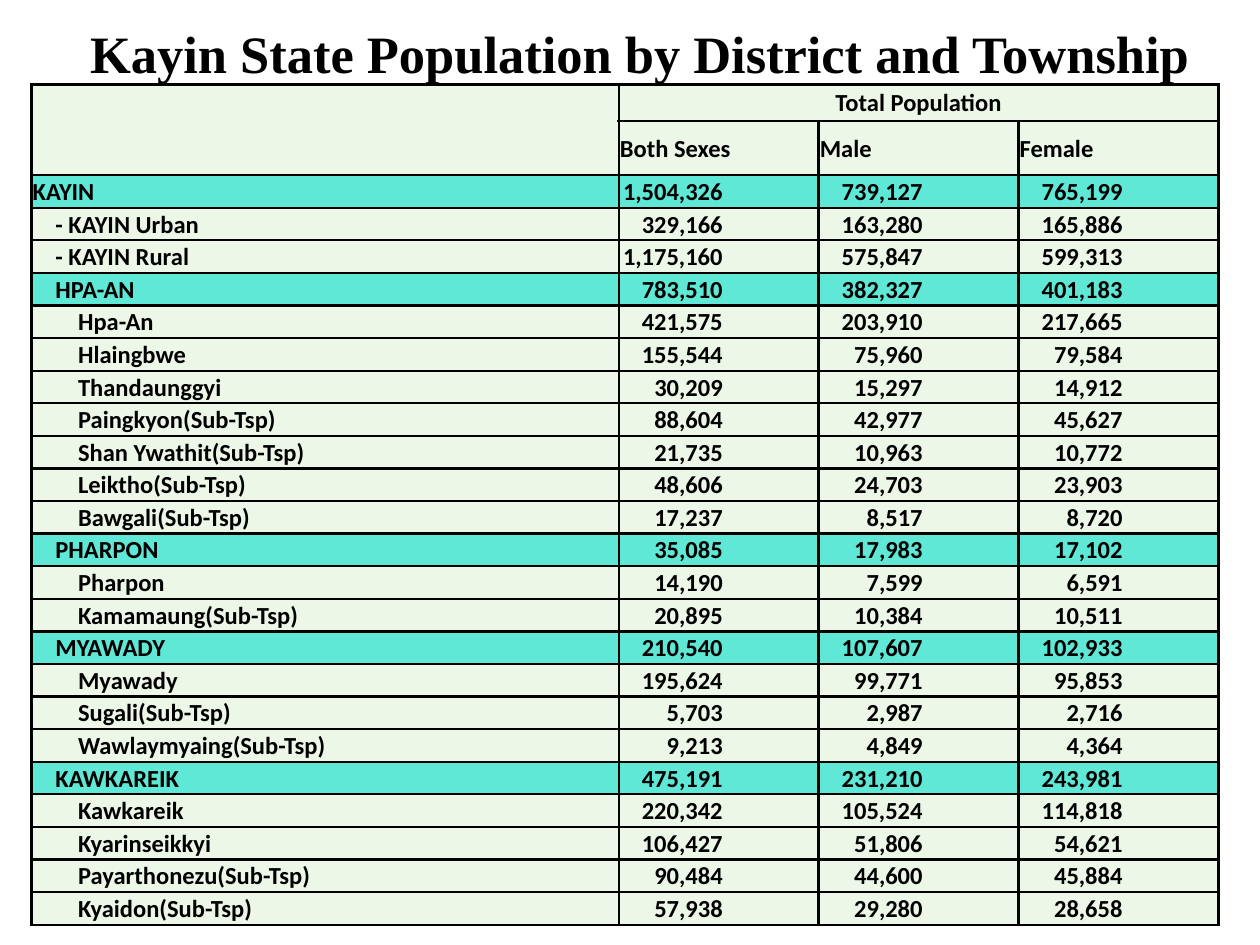
"""Build the slide with the Kayin State population table."""
from lxml.etree import SubElement
from pptx import Presentation
from pptx.dml.color import RGBColor
from pptx.enum.text import MSO_ANCHOR, PP_ALIGN
from pptx.oxml.ns import qn
from pptx.util import Inches, Pt

TITLE = "Kayin State Population by District and Township"
GROUP = "Total Population"
COLUMNS = ["Both Sexes", "Male", "Female"]
AREAS = [
    (0, "KAYIN", 1504326, 739127, 765199),
    (1, "- KAYIN Urban", 329166, 163280, 165886),
    (1, "- KAYIN Rural", 1175160, 575847, 599313),
    (1, "HPA-AN", 783510, 382327, 401183),
    (2, "Hpa-An", 421575, 203910, 217665),
    (2, "Hlaingbwe", 155544, 75960, 79584),
    (2, "Thandaunggyi", 30209, 15297, 14912),
    (2, "Paingkyon(Sub-Tsp)", 88604, 42977, 45627),
    (2, "Shan Ywathit(Sub-Tsp)", 21735, 10963, 10772),
    (2, "Leiktho(Sub-Tsp)", 48606, 24703, 23903),
    (2, "Bawgali(Sub-Tsp)", 17237, 8517, 8720),
    (1, "PHARPON", 35085, 17983, 17102),
    (2, "Pharpon", 14190, 7599, 6591),
    (2, "Kamamaung(Sub-Tsp)", 20895, 10384, 10511),
    (1, "MYAWADY", 210540, 107607, 102933),
    (2, "Myawady", 195624, 99771, 95853),
    (2, "Sugali(Sub-Tsp)", 5703, 2987, 2716),
    (2, "Wawlaymyaing(Sub-Tsp)", 9213, 4849, 4364),
    (1, "KAWKAREIK", 475191, 231210, 243981),
    (2, "Kawkareik", 220342, 105524, 114818),
    (2, "Kyarinseikkyi", 106427, 51806, 54621),
    (2, "Payarthonezu(Sub-Tsp)", 90484, 44600, 45884),
    (2, "Kyaidon(Sub-Tsp)", 57938, 29280, 28658),
]

BLACK = RGBColor(0x00, 0x00, 0x00)
PALE = RGBColor(0xEC, 0xF7, 0xE8)
TEAL = RGBColor(0x5F, 0xE8, 0xD6)

LEFT, TOP, WIDTH, HEIGHT = 0.25, 0.67, 9.42, 6.67
NAME_WIDTH = 4.66
HEADER_HEIGHTS = [0.29, 0.43]
INSET, INDENT, NUMBER_INSET = 0.01, 0.18, 0.76


def format_text(p, text, size, font, align):
    p.text = text
    p.alignment = align
    p.font.size, p.font.name = Pt(size), font
    p.font.bold, p.font.color.rgb = True, BLACK


def add_borders(cell):
    tcPr = cell._tc.get_or_add_tcPr()
    for i, side in enumerate(("lnL", "lnR", "lnT", "lnB")):
        ln = tcPr.makeelement(qn(f"a:{side}"), {"w": str(Pt(1.5))})
        fill = SubElement(ln, qn("a:solidFill"))
        SubElement(fill, qn("a:srgbClr"), val=str(BLACK))
        tcPr.insert(i, ln)


def fill_cell(cell, text="", fill=PALE, align=PP_ALIGN.LEFT, left=INSET, right=INSET):
    format_text(cell.text_frame.paragraphs[0], text, 14, "Calibri", align)
    cell.vertical_anchor = MSO_ANCHOR.MIDDLE
    cell.margin_left, cell.margin_right = Inches(left), Inches(right)
    cell.margin_top, cell.margin_bottom = Inches(INSET), 0
    cell.fill.solid()
    cell.fill.fore_color.rgb = fill
    add_borders(cell)


def add_population_table(s):
    n_head, n_cols = len(HEADER_HEIGHTS), 1 + len(COLUMNS)
    table = s.shapes.add_table(n_head + len(AREAS), n_cols, Inches(LEFT), Inches(TOP),
                               Inches(WIDTH), Inches(HEIGHT)).table
    table.horz_banding = table.first_row = False
    number_width = (WIDTH - NAME_WIDTH) / len(COLUMNS)
    for col, width in zip(table.columns, [NAME_WIDTH] + [number_width] * len(COLUMNS)):
        col.width = Inches(width)
    area_height = (HEIGHT - sum(HEADER_HEIGHTS)) / len(AREAS)
    for row, height in zip(table.rows, HEADER_HEIGHTS + [area_height] * len(AREAS)):
        row.height = Inches(height)

    for c, (group, label) in enumerate(zip(["", GROUP, "", ""], [""] + COLUMNS)):
        fill_cell(table.cell(0, c), group, align=PP_ALIGN.CENTER)
        fill_cell(table.cell(1, c), label)
    table.cell(0, 0).merge(table.cell(1, 0))
    table.cell(0, 1).merge(table.cell(0, n_cols - 1))

    for r, (level, name, *counts) in enumerate(AREAS, n_head):
        fill = TEAL if name.isupper() else PALE
        fill_cell(table.cell(r, 0), name, fill, left=INSET + level * INDENT)
        for c, count in enumerate(counts, 1):
            fill_cell(table.cell(r, c), f"{count:,}", fill, PP_ALIGN.RIGHT, right=NUMBER_INSET)


def main():
    prs = Presentation()
    prs.slide_width, prs.slide_height = Inches(10), Inches(7.5)
    s = prs.slides.add_slide(prs.slide_layouts[5])
    title = s.shapes.title
    title.left, title.top, title.width, title.height = map(Inches, (0.58, 0, 9, 0.83))
    title.text_frame.vertical_anchor = MSO_ANCHOR.MIDDLE
    format_text(title.text_frame.paragraphs[0], TITLE, 30, "Times New Roman", PP_ALIGN.CENTER)
    add_population_table(s)
    prs.save("out.pptx")


if __name__ == "__main__":
    main()
